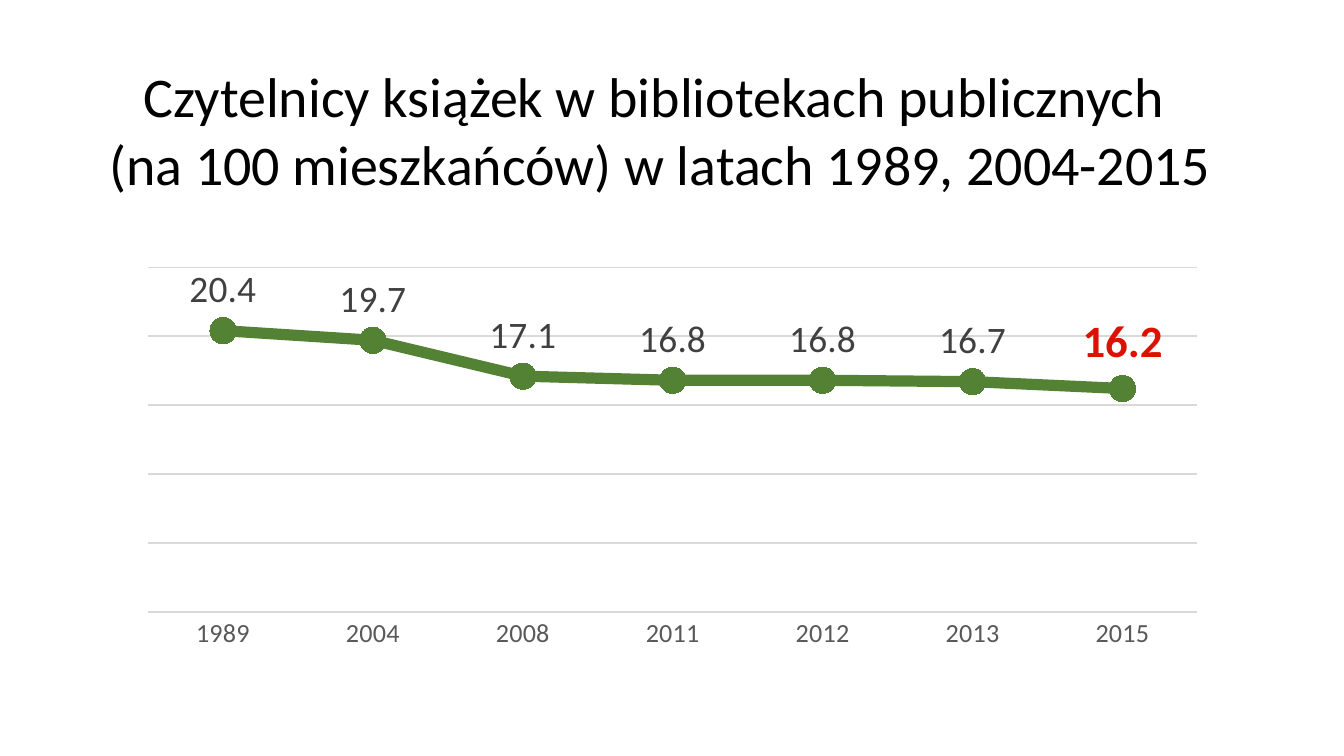
import pptx
import pptx.chart.data
import pptx.dml.color
import pptx.enum.chart
import pptx.enum.text
import pptx.oxml
import pptx.oxml.ns
import pptx.util
from pptx.util import Inches

COLORS = {
    "title": "000000",
    "line": "548235",
    "marker": "385723",
    "grid": "D9D9D9",
    "axis": "595959",
    "label": "404040",
    "latest": "DD1100",
}
FONT = "Calibri"
SLIDE_WIDTH = 10
READERS = {
    "1989": 20.4,
    "2004": 19.7,
    "2008": 17.1,
    "2011": 16.8,
    "2012": 16.8,
    "2013": 16.7,
    "2015": 16.2,
}
PLOT_AREA = {"x": 0.07, "y": 0.084, "w": 0.923, "h": 0.697}


def rgb(name):
    """Return the named colour."""
    return pptx.dml.color.RGBColor.from_string(COLORS[name])


def set_font(font, size, color, bold=False):
    """Apply the slide typeface with a size, colour and weight."""
    font.name = FONT
    font.size = pptx.util.Pt(size)
    font.bold = bold
    font.color.rgb = rgb(color)


def set_line(line, color, width):
    """Give a line its colour and its width in points."""
    line.color.rgb = rgb(color)
    line.width = pptx.util.Pt(width)


def add_title(slide, text):
    """Place and format the slide title."""
    title = slide.shapes.title
    title.left, title.top = Inches(0.31), Inches(0.44)
    title.width, title.height = Inches(9.21), Inches(1.04)
    frame = title.text_frame
    frame.text = text
    frame.word_wrap = True
    frame.vertical_anchor = pptx.enum.text.MSO_ANCHOR.MIDDLE
    heading = frame.paragraphs[0]
    heading.alignment = pptx.enum.text.PP_ALIGN.CENTER
    set_font(heading.font, 30, "title")


def format_axes(chart):
    """Show the years and gridlines, and hide the value scale."""
    years, scale = chart.category_axis, chart.value_axis
    for axis in (years, scale):
        axis.major_tick_mark = pptx.enum.chart.XL_TICK_MARK.NONE
        axis.minor_tick_mark = pptx.enum.chart.XL_TICK_MARK.NONE
    set_font(years.tick_labels.font, 14, "axis")
    set_line(years.format.line, "grid", 0.75)
    scale.minimum_scale, scale.maximum_scale, scale.major_unit = 0, 25, 5
    scale.tick_label_position = pptx.enum.chart.XL_TICK_LABEL_POSITION.NONE
    set_font(scale.tick_labels.font, 10, "axis")
    scale.format.line.fill.background()
    scale.has_major_gridlines = True
    set_line(scale.major_gridlines.format.line, "grid", 0.75)


def format_series(readers):
    """Style the readers line, its markers and its labels."""
    above = pptx.enum.chart.XL_LABEL_POSITION.ABOVE
    readers.smooth = False
    set_line(readers.format.line, "line", 6)
    readers.marker.style = pptx.enum.chart.XL_MARKER_STYLE.CIRCLE
    readers.marker.size = 14
    readers.marker.format.fill.solid()
    readers.marker.format.fill.fore_color.rgb = rgb("marker")
    readers.marker.format.line.fill.background()
    labels = readers.data_labels
    labels.show_value = True
    labels.position = above
    labels.number_format = "0.0"
    labels.number_format_is_linked = False
    set_font(labels.font, 20, "label")
    latest = readers.points[len(READERS) - 1].data_label
    set_font(latest.font, 24, "latest", bold=True)
    latest.position = above


def place_plot(chart):
    """Fix the inner plot area as fractions of the chart."""
    plot_area = chart.plots[0]._element.getparent()
    for old in plot_area.findall(pptx.oxml.ns.qn("c:layout")):
        plot_area.remove(old)
    settings = {"layoutTarget": "inner", "xMode": "edge", "yMode": "edge", **PLOT_AREA}
    parts = "".join(f'<c:{key} val="{value}"/>' for key, value in settings.items())
    layout = (
        f'<c:layout {pptx.oxml.ns.nsdecls("c")}>'
        f"<c:manualLayout>{parts}</c:manualLayout></c:layout>"
    )
    plot_area.insert(0, pptx.oxml.parse_xml(layout))


def add_readers_chart(slide):
    """Add the line chart of library readers by year."""
    data = pptx.chart.data.CategoryChartData(number_format="0.0")
    data.categories = list(READERS)
    data.add_series("Series 1", READERS.values())
    chart = slide.shapes.add_chart(
        pptx.enum.chart.XL_CHART_TYPE.LINE_MARKERS,
        Inches(0.51), Inches(1.68), Inches(8.46), Inches(3.68), data,
    ).chart
    chart.has_title = False
    chart.has_legend = False
    set_font(chart.font, 10, "title")
    chart.plots[0].vary_by_categories = False
    format_axes(chart)
    format_series(chart.series[0])
    place_plot(chart)


def main():
    """Build and save the slide."""
    deck = pptx.Presentation()
    deck.slide_width = Inches(SLIDE_WIDTH)
    deck.slide_height = Inches(SLIDE_WIDTH * 9 / 16)
    slide = deck.slides.add_slide(deck.slide_layouts[0])
    subtitle = slide.placeholders[1].element
    subtitle.getparent().remove(subtitle)
    add_title(
        slide,
        "Czytelnicy książek w bibliotekach publicznych \v"
        "(na 100 mieszkańców) w latach 1989, 2004-2015",
    )
    add_readers_chart(slide)
    deck.save("out.pptx")


if __name__ == "__main__":
    main()
